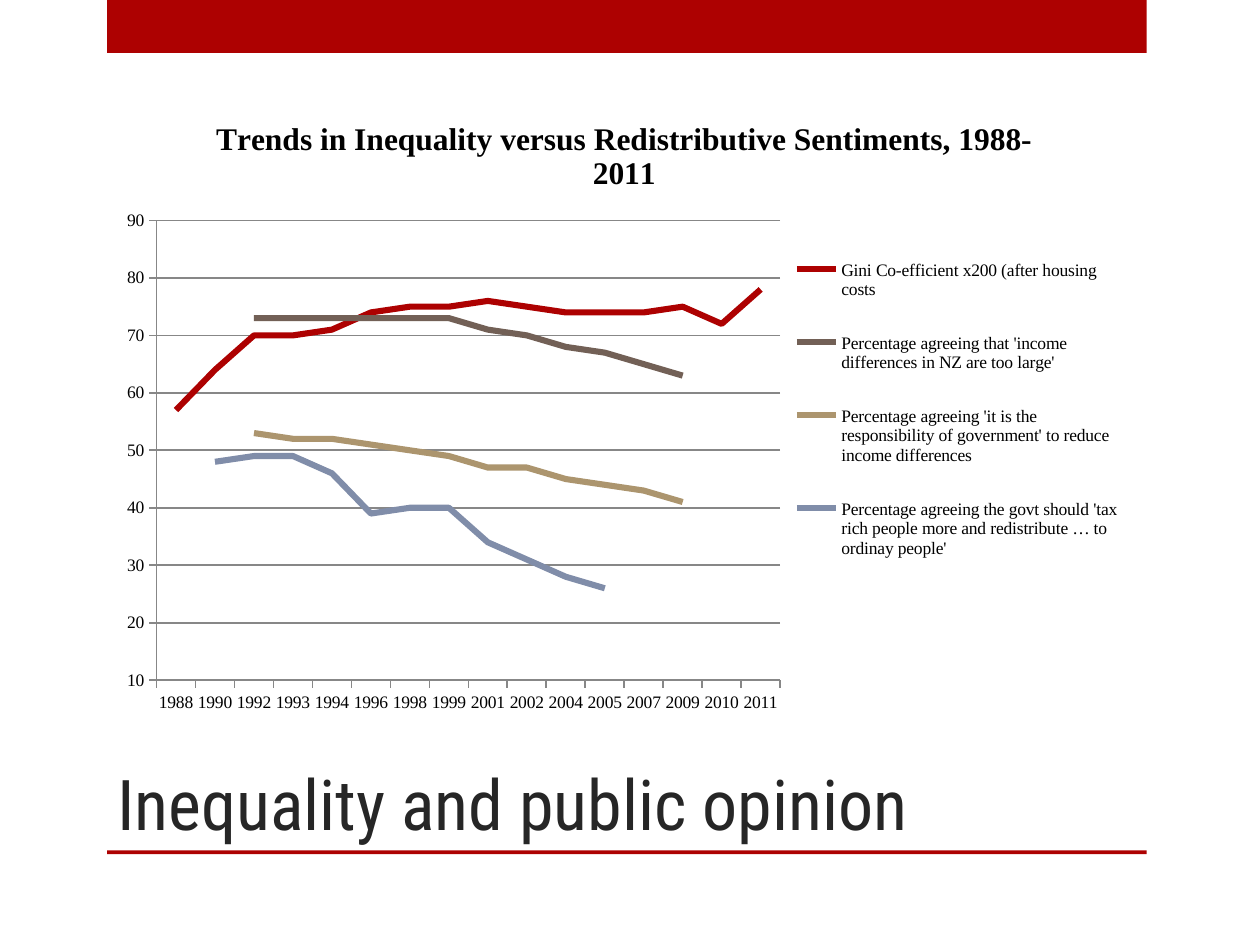
from lxml.etree import SubElement
from pptx import Presentation
from pptx.chart.data import CategoryChartData
from pptx.dml.color import RGBColor
from pptx.enum.chart import XL_CHART_TYPE as ChartType
from pptx.enum.chart import XL_LEGEND_POSITION as LegendPosition
from pptx.enum.chart import XL_TICK_MARK as TickMark
from pptx.enum.shapes import MSO_SHAPE as Shape
from pptx.enum.text import MSO_ANCHOR as Anchor
from pptx.enum.text import MSO_AUTO_SIZE as AutoSize
from pptx.enum.text import PP_ALIGN as Align
from pptx.oxml.ns import qn
from pptx.util import Inches, Pt

RED = RGBColor(0xAD, 0x01, 0x01)
BROWN = RGBColor(0x72, 0x60, 0x56)
TAN = RGBColor(0xAC, 0x95, 0x6E)
BLUE = RGBColor(0x80, 0x8D, 0xA9)
GRAY = RGBColor(0x87, 0x87, 0x87)
DARK = RGBColor(0x26, 0x26, 0x26)
BLACK = RGBColor(0, 0, 0)

HEADING_FONT = "Roboto Condensed"
CHART_FONT = "Times New Roman"

YEARS = ["1988", "1990", "1992", "1993", "1994", "1996", "1998", "1999",
         "2001", "2002", "2004", "2005", "2007", "2009", "2010", "2011"]
# Name, colour, first year, values for consecutive categories
TRENDS = [
    ("Gini Co-efficient x200 (after housing costs", RED, "1988",
     [57, 64, 70, 70, 71, 74, 75, 75, 76, 75, 74, 74, 74, 75, 72, 78]),
    ("Percentage agreeing that 'income differences in NZ are too large'",
     BROWN, "1992", [73, 73, 73, 73, 73, 73, 71, 70, 68, 67, 65, 63]),
    ("Percentage agreeing 'it is the responsibility of government' to reduce "
     "income differences",
     TAN, "1992", [53, 52, 52, 51, 50, 49, 47, 47, 45, 44, 43, 41]),
    ("Percentage agreeing the govt should 'tax rich people more and "
     "redistribute … to ordinay people'",
     BLUE, "1990", [48, 49, 49, 46, 39, 40, 40, 34, 31, 28, 26]),
]


def add_bar(slide, top, height):
    bar = slide.shapes.add_shape(
        Shape.RECTANGLE, Inches(0.85), Inches(top), Inches(8.25), Inches(height))
    bar.shadow.inherit = False
    bar.fill.solid()
    bar.fill.fore_color.rgb = RED
    bar.line.fill.background()


def set_title(slide, text):
    title = slide.shapes.title
    title.left, title.top = Inches(0.83), Inches(5)
    title.width, title.height = Inches(7.42), Inches(1.75)
    frame = title.text_frame
    frame.word_wrap = True
    frame.auto_size = AutoSize.NONE
    frame.vertical_anchor = Anchor.BOTTOM
    para = frame.paragraphs[0]
    para.alignment = Align.LEFT
    span = para.add_run()
    span.text = text
    style_font(span.font, HEADING_FONT, 40, DARK)


def style_font(font, name, size, color, bold=False):
    font.name = name
    font.size = Pt(size)
    font.color.rgb = color
    font.bold = bold


def style_line(line, color, width):
    line.color.rgb = color
    line.width = Pt(width)


def place_in_chart(part, index, bounds, inner=False):
    """Give a chart part a manual layout in fractions of the chart's size."""
    for old in part.findall(qn("c:layout")):
        part.remove(old)
    layout = SubElement(part, qn("c:layout"))
    part.insert(index, layout)
    manual = SubElement(layout, qn("c:manualLayout"))
    settings = [("layoutTarget", "inner")] if inner else []
    settings += [("xMode", "edge"), ("yMode", "edge")]
    settings += zip("xywh", bounds)
    for tag, value in settings:
        SubElement(manual, qn("c:" + tag)).set("val", str(value))


def build_chart_data():
    data = CategoryChartData()
    data.categories = YEARS
    for name, _, first_year, values in TRENDS:
        before = [None] * YEARS.index(first_year)
        after = [None] * (len(YEARS) - len(before) - len(values))
        data.add_series(name, before + values + after)
    return data


def style_axes(chart):
    for axis in (chart.category_axis, chart.value_axis):
        axis.major_tick_mark = TickMark.OUTSIDE
        axis.minor_tick_mark = TickMark.NONE
        style_line(axis.format.line, GRAY, 1)
    scale = chart.value_axis
    scale.minimum_scale, scale.maximum_scale, scale.major_unit = 10, 90, 10
    scale.has_major_gridlines = True
    style_line(scale.major_gridlines.format.line, GRAY, 1)


def add_trend_chart(slide, title):
    chart = slide.shapes.add_chart(
        ChartType.LINE, Inches(0.83), Inches(0.75), Inches(8.25), Inches(5),
        build_chart_data()).chart
    style_font(chart.font, CHART_FONT, 10, BLACK)

    chart.has_title = True
    span = chart.chart_title.text_frame.paragraphs[0].add_run()
    span.text = title
    style_font(span.font, CHART_FONT, 18, BLACK, bold=True)
    chart.chart_title.include_in_layout = False

    style_axes(chart)
    for series, (_, color, _, _) in zip(chart.plots[0].series, TRENDS):
        series.smooth = False
        style_line(series.format.line, color, 3.5)

    chart.has_legend = True
    legend = chart.legend
    legend.position = LegendPosition.RIGHT
    legend.include_in_layout = False
    style_font(legend.font, CHART_FONT, 10, BLACK)

    plot_area = chart.element.find(".//" + qn("c:plotArea"))
    place_in_chart(plot_area, 0, (0.05, 0.2, 0.6, 0.73), inner=True)
    legend_part = chart.element.find(".//" + qn("c:legend"))
    place_in_chart(legend_part, 1, (0.66, 0.21, 0.32, 0.58))


def main():
    deck = Presentation()
    deck.slide_width, deck.slide_height = Inches(10), Inches(7.5)
    slide = deck.slides.add_slide(deck.slide_layouts[5])
    add_bar(slide, 0, 0.42)
    add_bar(slide, 6.75, 0.03)
    set_title(slide, "Inequality and public opinion")
    add_trend_chart(
        slide, "Trends in Inequality versus Redistributive Sentiments, 1988-2011")
    deck.save("out.pptx")


if __name__ == "__main__":
    main()
